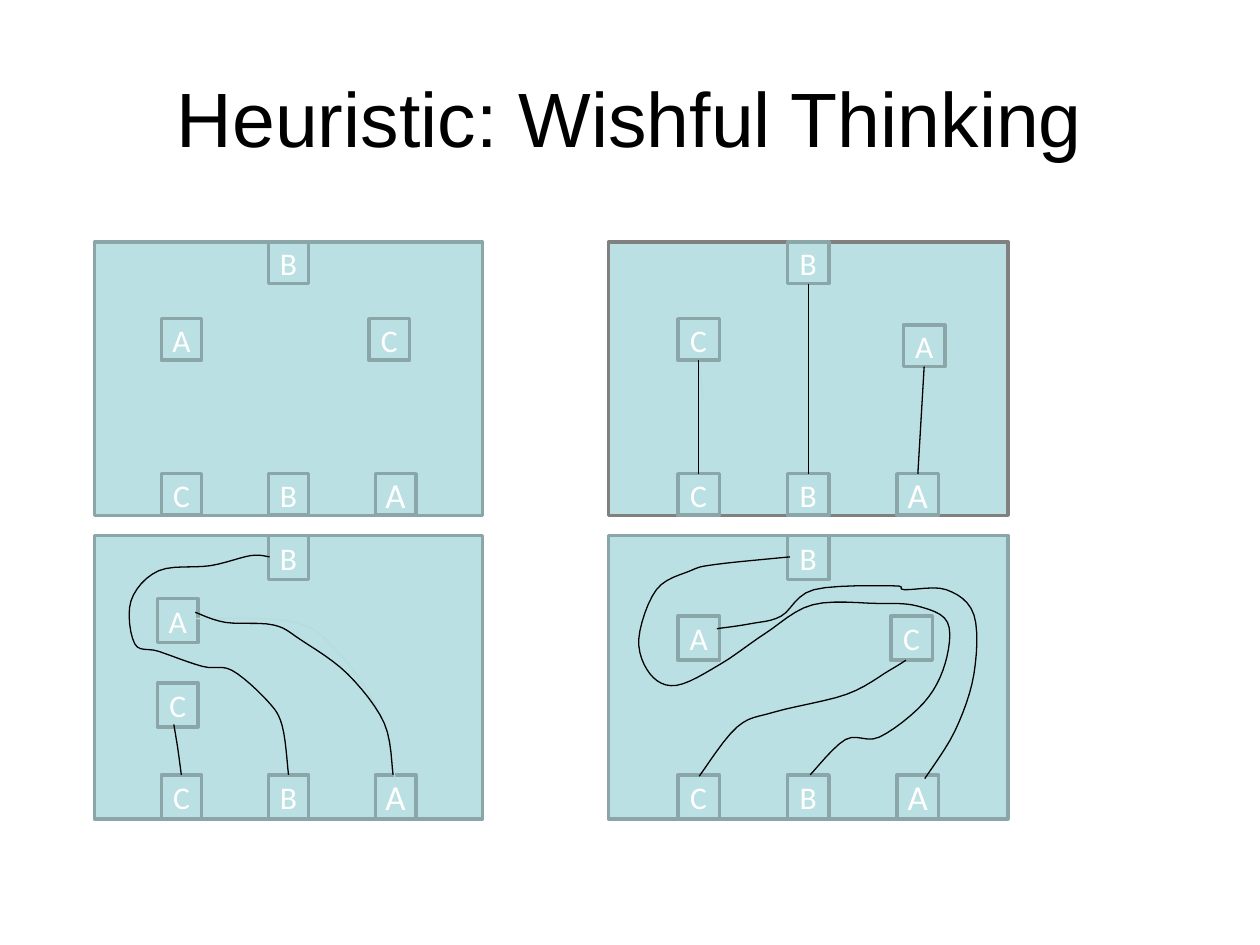
from dataclasses import dataclass

from pptx import Presentation
from pptx.dml.color import RGBColor
from pptx.enum.shapes import MSO_CONNECTOR, MSO_SHAPE
from pptx.enum.text import MSO_ANCHOR, PP_ALIGN
from pptx.oxml.ns import qn
from pptx.util import Inches, Pt
from lxml import etree

RECTANGLE = MSO_SHAPE.RECTANGLE
STRAIGHT = MSO_CONNECTOR.STRAIGHT
CENTER = PP_ALIGN.CENTER
MIDDLE = MSO_ANCHOR.MIDDLE
TOP_SITE, BOTTOM_SITE = 0, 2
CURVE_STEPS = 6

COLORS = {
    "panel": "BBE0E3",
    "border": "8AA6A8",
    "gray": "808080",
    "letter": "FFFFFF",
    "wire": "000000",
    "faint": "B6DCDF",
}


@dataclass
class Side:
    left: float
    width: float
    box_width: float
    spacing: float

    def column(self, index: int) -> float:
        """Left edge of a box in column 0, 1 or 2."""
        return self.left + (self.width - self.box_width) / 2 + (index - 1) * self.spacing


@dataclass
class Row:
    top: float
    height: float
    box_height: float


@dataclass
class Terminal:
    letter: str
    left: float
    top: float
    size: int = 18


@dataclass
class Panel:
    side: Side
    row: Row
    inner: list
    border: str = "border"

    def terminals(self) -> list:
        """Top B, the inner boxes, then C, B and A along the bottom."""
        bottom = self.row.top + self.row.height - self.row.box_height
        low = [Terminal(letter, self.side.column(index), bottom, 20 if letter == "A" else 18)
               for index, letter in enumerate("CBA")]
        return [Terminal("B", self.side.column(1), self.row.top), *self.inner, *low]


@dataclass
class Wire:
    points: list
    color: str = "wire"


LEFT = Side(0.75, 3.08, 0.32, 0.85)
RIGHT = Side(4.83, 3.17, 0.33, 0.87)
UPPER = Row(1.92, 2.17, 0.33)
LOWER = Row(4.25, 2.25, 0.35)

PANELS = [
    Panel(LEFT, UPPER, [Terminal("A", LEFT.column(0), 2.53), Terminal("C", 2.93, 2.53)]),
    Panel(LEFT, LOWER, [Terminal("C", 1.25, 5.42), Terminal("A", 1.25, 4.75)]),
    Panel(RIGHT, LOWER, [Terminal("A", RIGHT.column(0), 4.89), Terminal("C", 7.07, 4.89)]),
]
STRAIGHT_PANEL = Panel(RIGHT, UPPER, [Terminal("C", RIGHT.column(0), 2.53),
                                      Terminal("A", 7.17, 2.58)], "gray")

WIRES = [
    # Lower left panel: a faint stray stroke, then C, B and A
    Wire([(1.55, 4.91), (2.35, 4.94), (2.73, 5.23), (3.02, 5.68), (3.14, 6.2)], "faint"),
    Wire([(1.44, 6.15), (1.41, 5.93), (1.38, 5.75)]),
    Wire([(2.29, 6.15), (2.24, 5.76), (2.12, 5.56), (1.84, 5.32), (1.61, 5.29),
          (1.26, 5.17), (1.07, 5.11), (1.04, 4.77), (1.26, 4.53), (1.67, 4.49),
          (1.99, 4.41), (2.14, 4.42)]),
    Wire([(3.12, 6.15), (3.05, 5.74), (2.76, 5.35), (2.39, 5.08), (2.17, 4.96),
          (1.79, 4.94), (1.55, 4.86)]),
    # Lower right panel: C, A and B
    Wire([(5.55, 6.16), (5.85, 5.77), (6.15, 5.65), (6.72, 5.51), (7.06, 5.32),
          (7.19, 5.24)]),
    Wire([(7.34, 6.18), (7.58, 5.8), (7.73, 5.35), (7.73, 4.88), (7.51, 4.68),
          (7.18, 4.68), (7.09, 4.65), (6.46, 4.68), (6.2, 4.89), (5.96, 4.95),
          (5.69, 4.99)]),
    Wire([(6.43, 6.15), (6.71, 5.87), (6.98, 5.85), (7.33, 5.58), (7.5, 5.27),
          (7.52, 4.94), (7.28, 4.81), (6.97, 4.79), (6.45, 4.8), (6.07, 5.03),
          (5.72, 5.27), (5.37, 5.44), (5.16, 5.35), (5.07, 5.07), (5.21, 4.68),
          (5.48, 4.53), (5.68, 4.48), (6.27, 4.42)]),
]


def rgb(name: str) -> RGBColor:
    return RGBColor.from_string(COLORS[name])


def set_line(shape, color: str, width: float) -> None:
    shape.line.color.rgb = rgb(color)
    shape.line.width = Pt(width)


def add_box(slide, left: float, top: float, width: float, height: float, border: str):
    box = slide.shapes.add_shape(RECTANGLE, Inches(left), Inches(top),
                                 Inches(width), Inches(height))
    box.shadow.inherit = False
    box.fill.solid()
    box.fill.fore_color.rgb = rgb("panel")
    set_line(box, border, 2)
    return box


def add_span(para, text: str, size: int, font: str, color: str) -> None:
    para.alignment = CENTER
    span = para.add_run()
    span.text = text
    span.font.size = Pt(size)
    span.font.name = font
    span.font.color.rgb = rgb(color)


def draw_panel(slide, panel: Panel) -> list:
    side, row = panel.side, panel.row
    add_box(slide, side.left, row.top, side.width, row.height, panel.border)
    boxes = []
    for terminal in panel.terminals():
        box = add_box(slide, terminal.left, terminal.top,
                      side.box_width, row.box_height, "border")
        frame = box.text_frame
        frame.margin_left = frame.margin_right = 0
        frame.vertical_anchor = MIDDLE
        add_span(frame.paragraphs[0], terminal.letter, terminal.size, "Calibri", "letter")
        boxes.append(box)
    return boxes


def draw_connector(slide, start, color: str, end=None, end_point=(0, 0)) -> None:
    x, y = end_point
    line = slide.shapes.add_connector(STRAIGHT, 0, 0, Inches(x), Inches(y))
    line.begin_connect(start, BOTTOM_SITE)
    if end is not None:
        line.end_connect(end, TOP_SITE)
    set_line(line, color, 0.75)
    etree.SubElement(line._element.spPr, qn("a:effectLst"))


def smooth(points: list) -> list:
    """Catmull-Rom curve through the points."""
    padded = [points[0], *points, points[-1]]
    curve = [points[0]]
    for a, b, c, d in zip(padded, padded[1:], padded[2:], padded[3:]):
        for step in range(1, CURVE_STEPS + 1):
            t = step / CURVE_STEPS
            curve.append(tuple(
                q + t * ((r - p) + t * ((2 * p - 5 * q + 4 * r - s)
                                        + t * (3 * q - p - 3 * r + s))) / 2
                for p, q, r, s in zip(a, b, c, d)))
    return curve


def draw_wire(slide, wire: Wire) -> None:
    start, *rest = [(Inches(x), Inches(y)) for x, y in smooth(wire.points)]
    builder = slide.shapes.build_freeform(*start)
    builder.add_line_segments(rest, close=False)
    curve = builder.convert_to_shape()
    curve.shadow.inherit = False
    curve.fill.background()
    set_line(curve, wire.color, 0.75)


def main() -> None:
    deck = Presentation()
    deck.slide_width, deck.slide_height = Inches(10), Inches(7.5)
    slide = deck.slides.add_slide(deck.slide_layouts[5])

    # Title
    title = slide.shapes.title
    title.left, title.top = Inches(0.5), Inches(0.3)
    title.width, title.height = Inches(9), Inches(1.25)
    title.text_frame.vertical_anchor = MIDDLE
    add_span(title.text_frame.paragraphs[0], "Heuristic: Wishful Thinking",
             44, "Arial", "wire")

    # Panels
    for panel in PANELS:
        draw_panel(slide, panel)
    top_b, inner_c, inner_a, low_c, low_b, low_a = draw_panel(slide, STRAIGHT_PANEL)

    # Straight wires
    draw_connector(slide, inner_c, "faint", end_point=(5.58, 3.17))
    for start, end in ((inner_c, low_c), (top_b, low_b), (inner_a, low_a)):
        draw_connector(slide, start, "wire", end)

    # Winding wires
    for wire in WIRES:
        draw_wire(slide, wire)

    deck.save("out.pptx")


if __name__ == "__main__":
    main()
